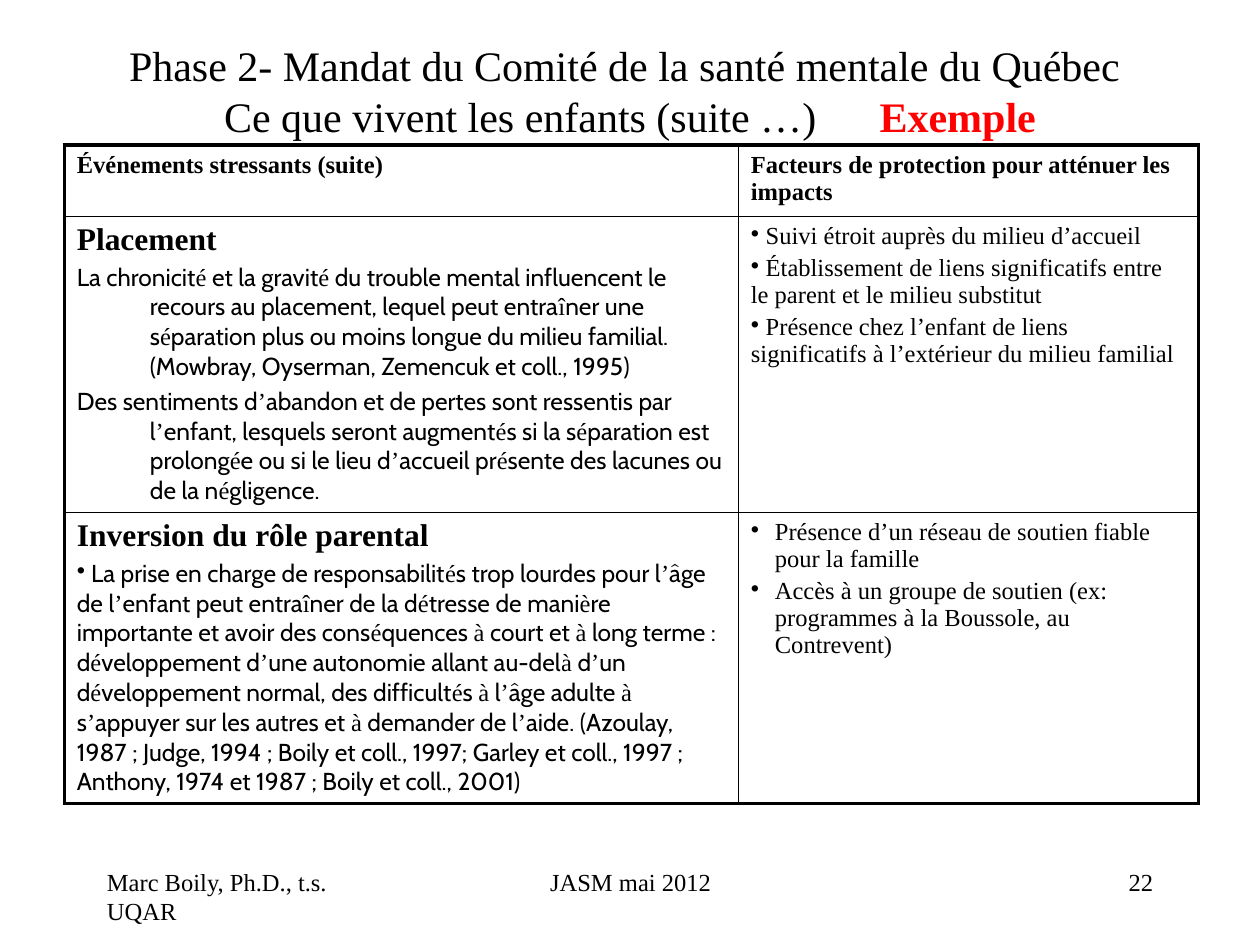
"""Build the slide on stressful events and protective factors for children."""
from itertools import groupby

from lxml import etree
from pptx import Presentation
from pptx import util as u
from pptx.dml.color import RGBColor
from pptx.enum import text
from pptx.oxml import ns

COLORS = {"ink": "000000", "accent": "FF0000"}
SERIF, SANS = "Times New Roman", "Cabin"
SERIF_GLYPHS = "éèîà’"


def set_font(para, size, bold=False):
    para.font.name = SERIF
    para.font.size = u.Pt(size)
    para.font.bold = bold
    para.font.color.rgb = RGBColor.from_string(COLORS["ink"])


def add_border(cell, side, width):
    line = etree.SubElement(cell._tc.get_or_add_tcPr(), ns.qn(f"a:{side}"), w=str(u.Pt(width)))
    fill = etree.SubElement(line, ns.qn("a:solidFill"))
    etree.SubElement(fill, ns.qn("a:srgbClr"), val=COLORS["ink"])


deck = Presentation()
deck.slide_width, deck.slide_height = u.Inches(10), u.Inches(7.5)
page = deck.slides.add_slide(deck.slide_layouts[6])

title = page.shapes.add_textbox(u.Inches(0.75), u.Inches(0.33), u.Inches(8.5), u.Inches(0.77))
title.text_frame.word_wrap = True
title.text_frame.vertical_anchor = text.MSO_ANCHOR.MIDDLE
para = title.text_frame.paragraphs[0]
para.alignment = text.PP_ALIGN.CENTER
set_font(para, 24)
para.add_run().text = "Phase 2- Mandat du Comité de la santé mentale du Québec "
para.add_line_break()
para.add_run().text = "Ce que vivent les enfants (suite …)"
gap = para.add_run()
gap.text = " "
gap.font._element.set("spc", "3000")
example = para.add_run()
example.text = "Exemple"
example.font.bold = True
example.font.color.rgb = RGBColor.from_string(COLORS["accent"])

STYLES = {
    "header": dict(size=14, bold=True),
    "heading": dict(size=18, bold=True),
    "hanging": dict(size=14, mixed=True, indent=0.58),
    "mixed bullet": dict(size=14, mixed=True, bullet=True),
    "bullet": dict(size=14, bullet=True),
    "hanging bullet": dict(size=14, bullet=True, indent=0.19),
}
ROWS = [
    [
        [("header", "Événements stressants (suite)")],
        [("header", "Facteurs de protection pour atténuer les impacts")],
    ],
    [
        [
            ("heading", "Placement"),
            ("hanging", "La chronicité et la gravité du trouble mental influencent le recours au "
             "placement, lequel peut entraîner une séparation plus ou moins longue du milieu "
             "familial. (Mowbray, Oyserman, Zemencuk et coll., 1995)"),
            ("hanging", "Des sentiments d’abandon et de pertes sont ressentis par l’enfant, "
             "lesquels seront augmentés si la séparation est prolongée ou si le lieu d’accueil "
             "présente des lacunes ou de la négligence."),
        ],
        [
            ("bullet", " Suivi étroit auprès du milieu d’accueil"),
            ("bullet", " Établissement de liens significatifs entre le parent et le milieu substitut"),
            ("bullet", " Présence chez l’enfant de liens significatifs à l’extérieur du milieu familial"),
        ],
    ],
    [
        [
            ("heading", "Inversion du rôle parental"),
            ("mixed bullet", " La prise en charge de responsabilités trop lourdes pour l’âge de "
             "l’enfant peut entraîner de la détresse de manière importante et avoir des "
             "conséquences à court et à long terme : développement d’une autonomie allant "
             "au-delà d’un développement normal, des difficultés à l’âge adulte à s’appuyer sur "
             "les autres et à demander de l’aide. (Azoulay, 1987 ; Judge, 1994 ; Boily et coll., "
             "1997; Garley et coll., 1997 ; Anthony, 1974 et 1987 ; Boily et coll., 2001)"),
        ],
        [
            ("hanging bullet", "Présence d’un réseau de soutien fiable pour la famille"),
            ("hanging bullet", "Accès à un groupe de soutien (ex: programmes à la Boussole, au Contrevent)"),
        ],
    ],
]
WIDTHS = [5.35, 3.65]
HEIGHTS = [0.51, 2.35, 2.31]

table = page.shapes.add_table(
    len(HEIGHTS), len(WIDTHS), u.Inches(0.51), u.Inches(1.15),
    u.Inches(sum(WIDTHS)), u.Inches(sum(HEIGHTS)),
).table
table.first_row = table.horz_banding = False
for column, width in zip(table.columns, WIDTHS):
    column.width = u.Inches(width)
for row, height in zip(table.rows, HEIGHTS):
    row.height = u.Inches(height)

for r, row in enumerate(ROWS):
    for c, entries in enumerate(row):
        cell = table.cell(r, c)
        outer = {"lnL": c == 0, "lnR": c == len(WIDTHS) - 1,
                 "lnT": r == 0, "lnB": r == len(HEIGHTS) - 1}
        for side, is_outer in outer.items():
            add_border(cell, side, 2.25 if is_outer else 1)
        cell.fill.background()
        for i, (kind, wording) in enumerate(entries):
            style = STYLES[kind]
            para = cell.text_frame.add_paragraph() if i else cell.text_frame.paragraphs[0]
            para.space_before = u.Pt(style["size"] * 0.2)
            props = para._p.get_or_add_pPr()
            indent = u.Inches(style.get("indent", 0))
            props.set("marL", str(indent))
            props.set("indent", str(-indent))
            if style.get("bullet"):
                etree.SubElement(props, ns.qn("a:buChar"), char="•")
            set_font(para, style["size"], style.get("bold", False))
            if style.get("mixed"):
                for is_serif, letters in groupby(wording, lambda letter: letter in SERIF_GLYPHS):
                    span = para.add_run()
                    span.text = "".join(letters)
                    span.font.name = SERIF if is_serif else SANS
            else:
                para.add_run().text = wording

FOOTERS = [
    (0.75, 2.08, text.PP_ALIGN.LEFT, "Marc Boily, Ph.D., t.s. UQAR"),
    (3.42, 3.17, text.PP_ALIGN.CENTER, "JASM mai 2012"),
    (7.17, 2.08, text.PP_ALIGN.RIGHT, "22"),
]
for left, width, alignment, wording in FOOTERS:
    box = page.shapes.add_textbox(u.Inches(left), u.Inches(6.83), u.Inches(width), u.Inches(0.5))
    box.text_frame.word_wrap = True
    para = box.text_frame.paragraphs[0]
    para.alignment = alignment
    para.add_run().text = wording
    set_font(para, 14)

deck.save("out.pptx")
